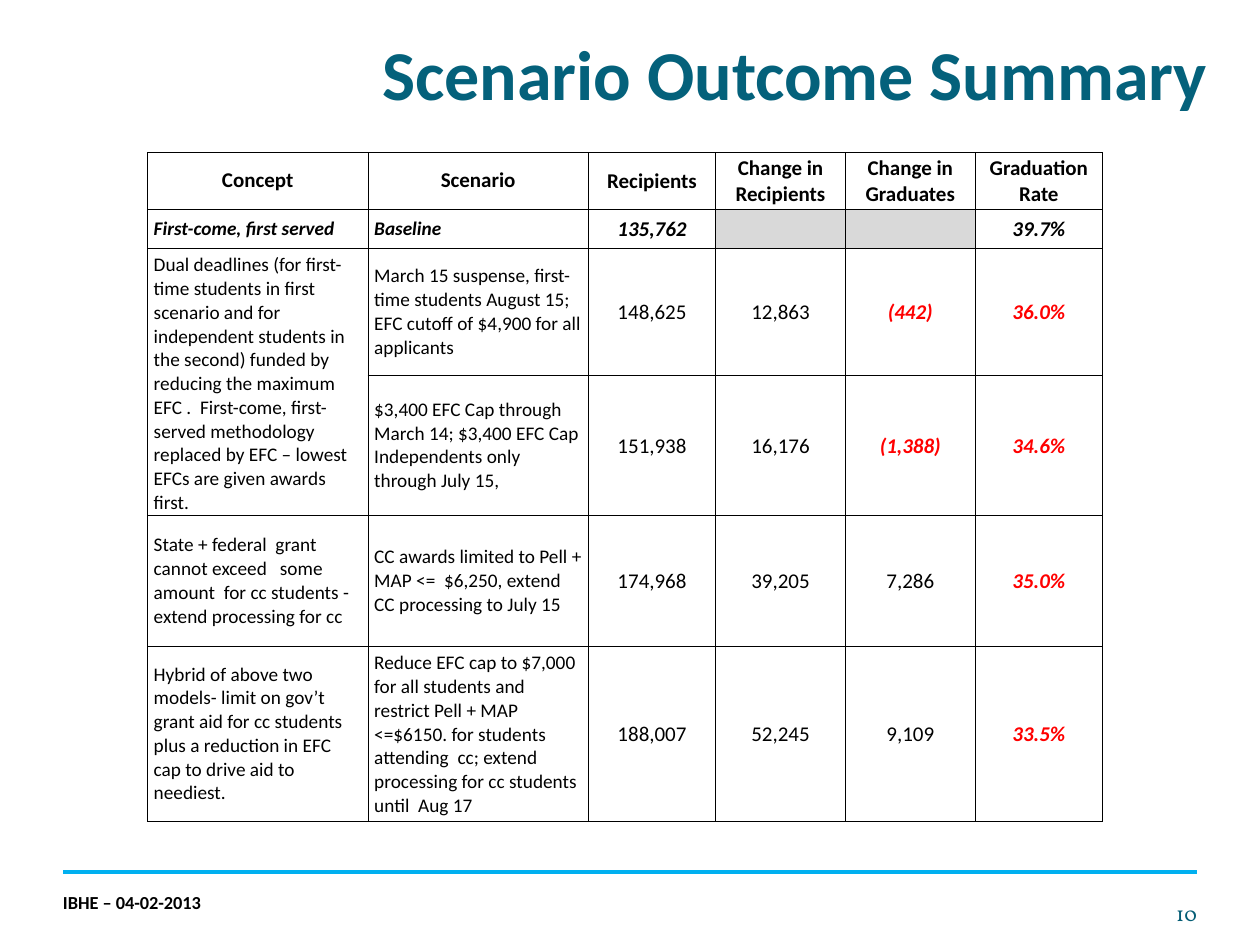
from lxml.etree import SubElement
from pptx import Presentation
from pptx.dml.color import RGBColor
from pptx.enum.shapes import MSO_CONNECTOR
from pptx.enum.text import MSO_ANCHOR, PP_ALIGN
from pptx.oxml.ns import qn
from pptx.util import Inches, Pt

BLACK, RED, GREY = "000000", "FF0000", "D9D9D9"
HEADINGS = ["Concept", "Scenario", "Recipients", "Change in Recipients",
            "Change in Graduates", "Graduation Rate"]
BASELINE = ["First-come, first served", "Baseline", "135,762", "", "", "39.7%"]
SCENARIOS = [
    ["Dual deadlines (for first-time students in first scenario and for independent "
     "students in the second) funded by reducing the maximum EFC .  First-come, "
     "first-served methodology replaced by EFC – lowest EFCs are given awards first.",
     "March 15 suspense, first-time students August 15; EFC cutoff of $4,900 for all applicants",
     "148,625", "12,863", "(442)", "36.0%"],
    ["",
     "$3,400 EFC Cap through March 14; $3,400 EFC Cap Independents only through July 15,",
     "151,938", "16,176", "(1,388)", "34.6%"],
    ["State + federal  grant cannot exceed   some amount  for cc students - "
     "extend processing for cc",
     "CC awards limited to Pell + MAP <=  $6,250, extend CC processing to July 15",
     "174,968", "39,205", "7,286", "35.0%"],
    ["Hybrid of above two models- limit on gov’t grant aid for cc students  plus a "
     "reduction in EFC cap to drive aid to neediest.",
     "Reduce EFC cap to $7,000 for all students and restrict Pell + MAP <=$6150. for "
     "students attending  cc; extend processing for cc students until  Aug 17",
     "188,007", "52,245", "9,109", "33.5%"],
]
ROWS = [HEADINGS, BASELINE] + SCENARIOS
COLUMN_WIDTHS = [1.75, 1.75, 1.01, 1.03, 1.03, 1.01]
ROW_HEIGHTS = [0.45, 0.28, 1.01, 1.11, 1.04, 1.39]
TEXT_COLUMNS = 2
RATE_COLUMN = 5


def color(value):
    return RGBColor.from_string(value)


def add_span(para, text, size, hue, bold=False, italic=False, font="Calibri"):
    span = para.add_run()
    span.text = text
    span.font.size = Pt(size)
    span.font.name = font
    span.font.bold = bold
    span.font.italic = italic
    span.font.color.rgb = color(hue)


def add_text(page, place, text, align, size, hue, right=0, **style):
    """Add a bottom-anchored text box; right is its right inset."""
    box = page.shapes.add_textbox(*map(Inches, place))
    frame = box.text_frame
    frame.word_wrap = True
    frame.vertical_anchor = MSO_ANCHOR.BOTTOM
    frame.margin_left = frame.margin_top = frame.margin_bottom = 0
    frame.margin_right = Inches(right)
    para = frame.paragraphs[0]
    para.alignment = align
    add_span(para, text, size, hue, **style)


def set_borders(cell):
    properties = cell._tc.get_or_add_tcPr()
    for position, side in enumerate(("a:lnL", "a:lnR", "a:lnT", "a:lnB")):
        line = SubElement(properties, qn(side), w=str(Pt(0.5)))
        fill = SubElement(line, qn("a:solidFill"))
        SubElement(fill, qn("a:srgbClr"), val=BLACK)
        properties.insert(position, line)


def fill_cell(cell, row, column, text):
    is_text = column < TEXT_COLUMNS
    scenario = row > 1
    red = scenario and (column == RATE_COLUMN or text.startswith("("))
    cell.vertical_anchor = MSO_ANCHOR.MIDDLE
    cell.margin_left = cell.margin_right = Inches(0.05 if is_text else 0.01)
    cell.margin_top = Inches(0.04 if is_text else 0.01)
    cell.margin_bottom = Inches(0.04 if is_text else 0)
    if row == 1 and not text:
        cell.fill.solid()
        cell.fill.fore_color.rgb = color(GREY)
    else:
        cell.fill.background()
    para = cell.text_frame.paragraphs[0]
    para.alignment = PP_ALIGN.LEFT if is_text and row else PP_ALIGN.CENTER
    add_span(para, text, 11 if is_text and row else 12, RED if red else BLACK,
             bold=red or not scenario, italic=red or row == 1)
    set_borders(cell)


def add_outcomes(page):
    frame = page.shapes.add_table(
        len(ROWS), len(HEADINGS), Inches(1.17), Inches(1.21),
        Inches(sum(COLUMN_WIDTHS)), Inches(sum(ROW_HEIGHTS)))
    table = frame.table
    table.first_row = table.horz_banding = False
    for column, width in zip(table.columns, COLUMN_WIDTHS):
        column.width = Inches(width)
    for row, height in zip(table.rows, ROW_HEIGHTS):
        row.height = Inches(height)
    for row, texts in enumerate(ROWS):
        for column, text in enumerate(texts):
            fill_cell(table.cell(row, column), row, column, text)
    table.cell(2, 0).merge(table.cell(3, 0))


def add_footer_rule(page):
    rule = page.shapes.add_connector(
        MSO_CONNECTOR.STRAIGHT, Inches(0.5), Inches(6.92), Inches(9.5), Inches(6.92))
    rule.line.color.rgb = color("00B0F0")
    rule.line.width = Pt(2.25)
    SubElement(rule._element.spPr, qn("a:effectLst"))


def main():
    deck = Presentation()
    deck.slide_width, deck.slide_height = Inches(10), Inches(7.5)
    page = deck.slides.add_slide(deck.slide_layouts[6])
    add_footer_rule(page)
    add_text(page, (0.29, 0.19, 9.42, 0.72), "Scenario Outcome Summary",
             PP_ALIGN.RIGHT, 40, "04617B", right=0.13, bold=True)
    add_outcomes(page)
    add_text(page, (8.67, 6.95, 0.83, 0.4), "10", PP_ALIGN.RIGHT, 12, "045D75",
             font="Vollkorn")
    add_text(page, (0.5, 6.85, 3.67, 0.4), "IBHE – 04-02-2013", PP_ALIGN.LEFT,
             10.5, BLACK, bold=True)
    deck.save("out.pptx")


if __name__ == "__main__":
    main()
